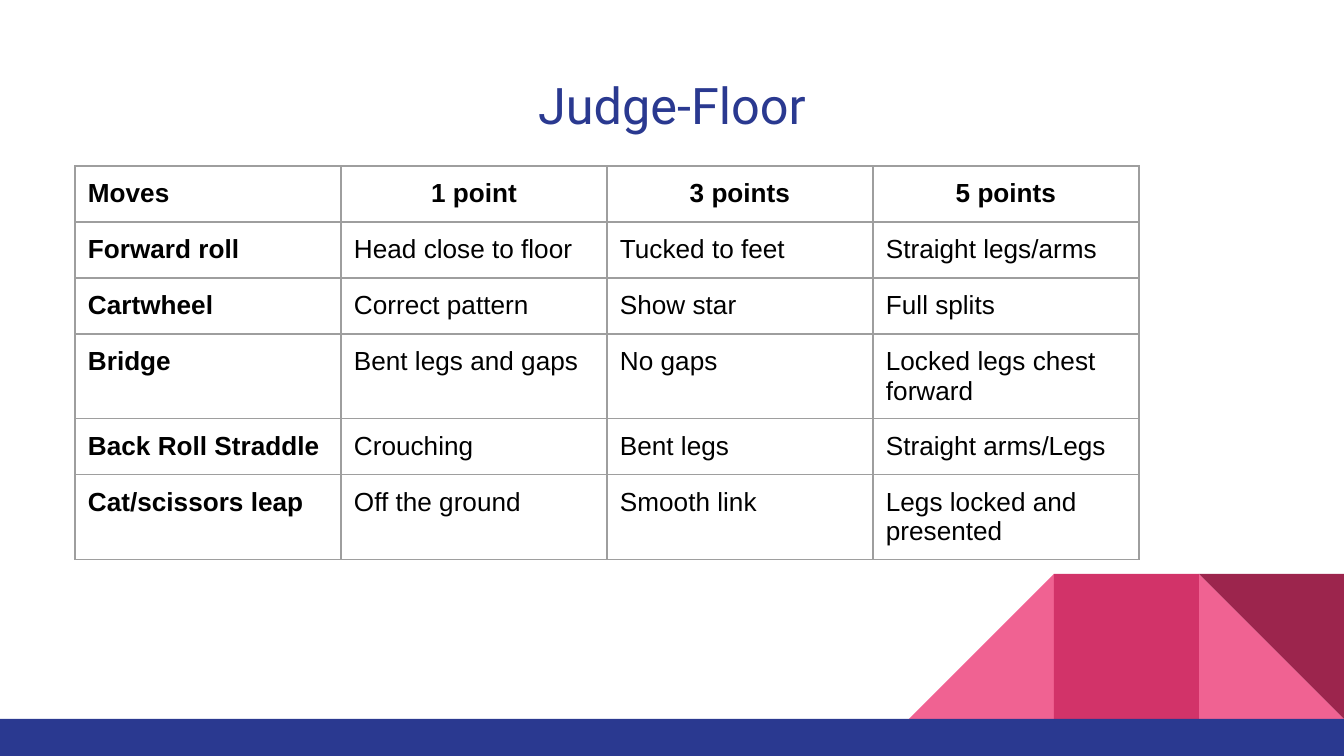
from dataclasses import dataclass

from lxml.etree import SubElement
from pptx import Presentation
from pptx.dml.color import RGBColor
from pptx.enum.shapes import MSO_SHAPE
from pptx.enum.text import MSO_ANCHOR, PP_ALIGN
from pptx.oxml.ns import qn
from pptx.slide import Slide
from pptx.table import _Cell
from pptx.text.text import TextFrame
from pptx.util import Emu, Pt

PX_PER_INCH = 134.4
WIDTH, HEIGHT = 1344, 756


def px(length: int) -> Emu:
    return Emu(round(length * 914400 / PX_PER_INCH))


@dataclass(frozen=True)
class Theme:
    navy: str = "2A3990"
    pink: str = "F06292"
    rose: str = "D23369"
    wine: str = "9C254D"
    ink: str = "000000"
    grid: str = "9E9E9E"
    title_font: str = "Roboto"
    table_font: str = "Arial"
    title_size: int = 27
    table_size: int = 14
    inset: int = 13


@dataclass(frozen=True)
class Block:
    kind: MSO_SHAPE
    left: int
    top: int
    width: int
    height: int
    color: str
    rotation: int = 0
    mirrored: bool = False


THEME = Theme()
TILE = 145
FOOTER_TOP = 719
TILE_TOP = FOOTER_TOP - TILE
LEFT_TILE, MIDDLE_TILE, RIGHT_TILE = (WIDTH - n * TILE for n in (3, 2, 1))

DECORATION = [
    Block(MSO_SHAPE.RIGHT_TRIANGLE, RIGHT_TILE, TILE_TOP, TILE, TILE, THEME.pink),
    Block(MSO_SHAPE.RIGHT_TRIANGLE, LEFT_TILE, TILE_TOP, TILE, TILE, THEME.pink, mirrored=True),
    Block(MSO_SHAPE.RECTANGLE, MIDDLE_TILE, TILE_TOP, TILE, TILE, THEME.rose),
    Block(MSO_SHAPE.RIGHT_TRIANGLE, RIGHT_TILE, TILE_TOP, TILE, TILE, THEME.wine, rotation=180),
    Block(MSO_SHAPE.RECTANGLE, 0, FOOTER_TOP, WIDTH, HEIGHT - FOOTER_TOP, THEME.navy),
]

TABLE_LEFT, TABLE_TOP = 75, 166
COLUMN_WIDTH, ROW_HEIGHT = 266, 56
SCORES = [
    ("Moves", "1 point", "3 points", "5 points"),
    ("Forward roll", "Head close to floor", "Tucked to feet", "Straight legs/arms"),
    ("Cartwheel", "Correct pattern", "Show star", "Full splits"),
    ("Bridge", "Bent legs and gaps", "No gaps", "Locked legs chest forward"),
    ("Back Roll Straddle", "Crouching", "Bent legs", "Straight arms/Legs"),
    ("Cat/scissors leap", "Off the ground", "Smooth link", "Legs locked and presented"),
]


def draw_block(slide: Slide, block: Block) -> None:
    shape = slide.shapes.add_shape(
        block.kind, px(block.left), px(block.top), px(block.width), px(block.height))
    shape.shadow.inherit = False
    shape.fill.solid()
    shape.fill.fore_color.rgb = RGBColor.from_string(block.color)
    shape.line.fill.background()
    shape.rotation = block.rotation
    if block.mirrored:
        shape._element.spPr.find(qn("a:xfrm")).set("flipH", "1")


def write(frame: TextFrame, text: str, font_name: str, size: int, color: str,
          bold: bool, align: PP_ALIGN) -> None:
    paragraph = frame.paragraphs[0]
    paragraph.text = text
    paragraph.alignment = align
    font = paragraph.font
    font.name, font.size, font.bold = font_name, Pt(size), bold
    font.color.rgb = RGBColor.from_string(color)


def draw_title(slide: Slide, text: str) -> None:
    title = slide.shapes.title
    title.left, title.top, title.width, title.height = map(px, (46, 60, 1252, 89))
    frame = title.text_frame
    frame.margin_left = frame.margin_right = px(THEME.inset)
    frame.margin_top = frame.margin_bottom = px(THEME.inset)
    frame.vertical_anchor = MSO_ANCHOR.MIDDLE
    write(frame, text, THEME.title_font, THEME.title_size, THEME.navy, False, PP_ALIGN.CENTER)


def set_borders(cell: _Cell) -> None:
    properties = cell._tc.get_or_add_tcPr()
    for position, side in enumerate(("lnL", "lnR", "lnT", "lnB")):
        line = SubElement(properties, qn(f"a:{side}"), w=str(Pt(0.75)))
        fill = SubElement(line, qn("a:solidFill"))
        SubElement(fill, qn("a:srgbClr"), val=THEME.grid)
        properties.insert(position, line)


def draw_scores(slide: Slide, rows: list[tuple[str, ...]]) -> None:
    row_count, column_count = len(rows), len(rows[0])
    table = slide.shapes.add_table(
        row_count, column_count, px(TABLE_LEFT), px(TABLE_TOP),
        px(column_count * COLUMN_WIDTH), px(row_count * ROW_HEIGHT)).table
    table.first_row = table.horz_banding = False
    for column in table.columns:
        column.width = px(COLUMN_WIDTH)
    for row_index, row in enumerate(rows):
        table.rows[row_index].height = px(ROW_HEIGHT)
        for column_index, text in enumerate(row):
            cell = table.cell(row_index, column_index)
            cell.margin_left = cell.margin_right = px(THEME.inset)
            cell.margin_top = cell.margin_bottom = px(THEME.inset)
            cell.fill.background()
            set_borders(cell)
            is_header = row_index == 0
            is_move = column_index == 0
            align = PP_ALIGN.CENTER if is_header and not is_move else PP_ALIGN.LEFT
            write(cell.text_frame, text, THEME.table_font, THEME.table_size,
                  THEME.ink, is_header or is_move, align)


def main() -> None:
    presentation = Presentation()
    presentation.slide_width, presentation.slide_height = px(WIDTH), px(HEIGHT)
    slide = presentation.slides.add_slide(presentation.slide_layouts[5])
    for block in DECORATION:
        draw_block(slide, block)
    draw_title(slide, "Judge-Floor")
    draw_scores(slide, SCORES)
    presentation.save("out.pptx")


if __name__ == "__main__":
    main()
